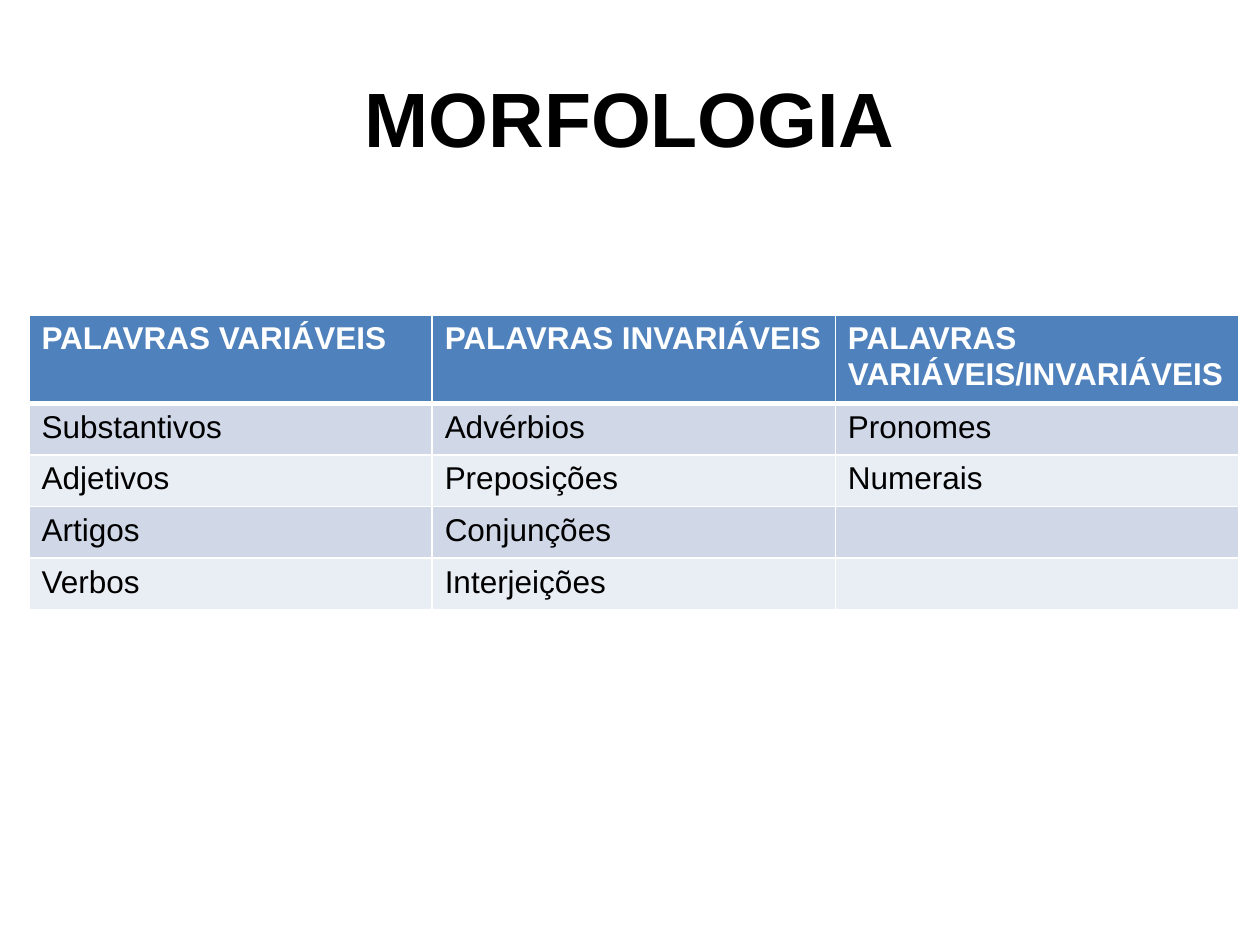
from lxml import etree
from pptx import Presentation
from pptx import util as u
from pptx.dml.color import RGBColor
from pptx.enum import text
from pptx.oxml.ns import qn

BLACK = RGBColor(0x00, 0x00, 0x00)
WHITE = RGBColor(0xFF, 0xFF, 0xFF)
HEADER = RGBColor(0x4F, 0x81, 0xBD)
BANDS = [RGBColor(0xE9, 0xED, 0xF4), RGBColor(0xD0, 0xD8, 0xE8)]

COLUMN = u.Inches(3.2)
ROW = u.Inches(0.41)
HEADER_ROW = u.Inches(0.65)

WORD_CLASSES = [
    ["PALAVRAS VARIÁVEIS", "PALAVRAS INVARIÁVEIS", "PALAVRAS VARIÁVEIS/INVARIÁVEIS"],
    ["Substantivos", "Advérbios", "Pronomes"],
    ["Adjetivos", "Preposições", "Numerais"],
    ["Artigos", "Conjunções", ""],
    ["Verbos", "Interjeições", ""],
]


def style_text(para, size, color, bold):
    for span in para.runs:
        span.font.name = "Arial"
        span.font.size = u.Pt(size)
        span.font.bold = bold
        span.font.color.rgb = color


def add_border(cell, side, points):
    line = etree.SubElement(cell._tc.get_or_add_tcPr(), qn(f"a:{side}"), w=str(u.Pt(points)))
    fill = etree.SubElement(line, qn("a:solidFill"))
    etree.SubElement(fill, qn("a:srgbClr"), val=str(WHITE))


deck = Presentation()
deck.slide_width = u.Inches(10)
deck.slide_height = u.Inches(7.5)
page = deck.slides.add_slide(deck.slide_layouts[6])

title = page.shapes.add_textbox(
    int(deck.slide_width * 0.05), int(deck.slide_height * 0.04),
    int(deck.slide_width * 0.9), u.Inches(1.25))
title.text_frame.word_wrap = True
title.text_frame.vertical_anchor = text.MSO_ANCHOR.MIDDLE
title.text_frame.text = "MORFOLOGIA"
para = title.text_frame.paragraphs[0]
para.alignment = text.PP_ALIGN.CENTER
style_text(para, 44, BLACK, True)

row_count = len(WORD_CLASSES)
column_count = len(WORD_CLASSES[0])
table = page.shapes.add_table(
    row_count, column_count, u.Inches(0.23), deck.slide_height // 3,
    COLUMN * column_count, HEADER_ROW + ROW * (row_count - 1)).table

for column in table.columns:
    column.width = COLUMN

for index, words in enumerate(WORD_CLASSES):
    is_header = index == 0
    table.rows[index].height = HEADER_ROW if is_header else ROW
    for position, word in enumerate(words):
        cell = table.cell(index, position)
        cell.text_frame.text = word
        style_text(cell.text_frame.paragraphs[0], 18, WHITE if is_header else BLACK, is_header)
        for side in ("lnL", "lnR", "lnT", "lnB"):
            heavy = (index, side) in ((0, "lnB"), (1, "lnT"))
            add_border(cell, side, 3 if heavy else 1)
        cell.fill.solid()
        cell.fill.fore_color.rgb = HEADER if is_header else BANDS[index % 2]

deck.save("out.pptx")
